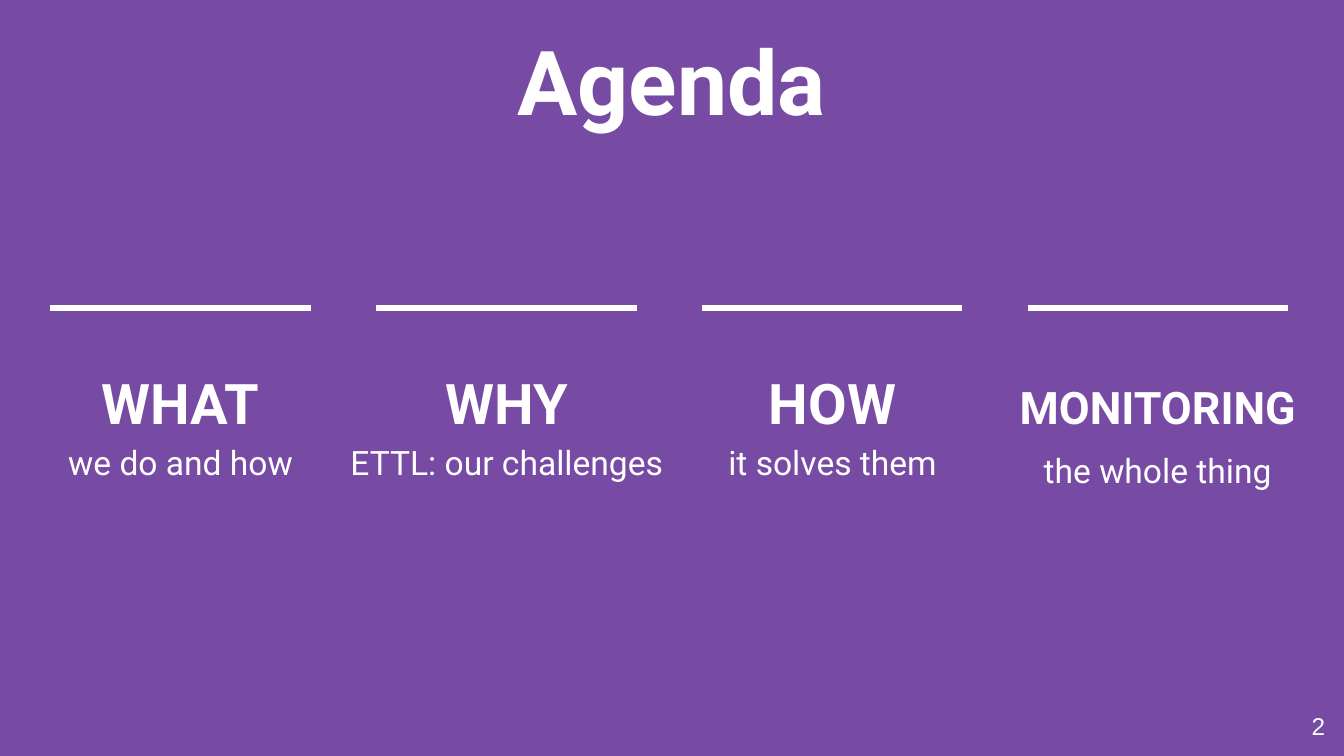
from lxml.etree import SubElement
from pptx import Presentation
from pptx.dml.color import RGBColor
from pptx.enum.shapes import MSO_CONNECTOR
from pptx.enum.text import MSO_ANCHOR, PP_ALIGN
from pptx.oxml.ns import qn
from pptx.util import Cm, Pt


def color(value):
    return RGBColor.from_string(value)


class AgendaSlide:
    PURPLE = "774AA4"
    WHITE = "FFFFFF"
    INSET = 0.25

    def __init__(self, deck):
        self.slide = deck.slides.add_slide(deck.slide_layouts[5])
        background = self.slide.background.fill
        background.solid()
        background.fore_color.rgb = color(self.PURPLE)

    def apply(self, target, values):
        for name, value in values.items():
            setattr(target, name, value)

    def fill_text(self, box, runs, anchor, align, spacing=1.0, font="Roboto"):
        frame = box.text_frame
        margins = ("margin_left", "margin_top", "margin_right", "margin_bottom")
        self.apply(frame, dict.fromkeys(margins, Cm(self.INSET)))
        self.apply(frame, {"word_wrap": True, "vertical_anchor": anchor})
        paragraph = frame.paragraphs[0]
        self.apply(paragraph, {"alignment": align, "line_spacing": spacing})
        for index, (text, size, bold) in enumerate(runs):
            if index:
                paragraph.add_line_break()
            run = paragraph.add_run()
            run.text = text
            self.apply(run.font, {"name": font, "size": Pt(size), "bold": bold})
            run.font.color.rgb = color(self.WHITE)

    def title(self, text, left, top, width, height):
        heading = self.slide.shapes.title
        place = {"left": left, "top": top, "width": width, "height": height}
        self.apply(heading, {name: Cm(value) for name, value in place.items()})
        self.fill_text(heading, [(text, 48, True)], MSO_ANCHOR.MIDDLE, PP_ALIGN.CENTER, 0.9)

    def text(self, runs, left, top, width, height, **style):
        box = self.slide.shapes.add_textbox(Cm(left), Cm(top), Cm(width), Cm(height))
        self.fill_text(box, runs, **style)

    def rule(self, left, top, length):
        rule = self.slide.shapes.add_connector(
            MSO_CONNECTOR.STRAIGHT, Cm(left), Cm(top), Cm(left + length), Cm(top))
        rule.line.color.rgb = color(self.WHITE)
        rule.line.width = Pt(3)
        SubElement(rule._element.spPr, qn("a:effectLst"))


def main():
    deck = Presentation()
    deck.slide_width, deck.slide_height = Cm(25.4), Cm(14.29)
    agenda = AgendaSlide(deck)
    agenda.title("Agenda", 9, 0.43, 7.39, 2.41)

    for column in range(4):
        agenda.rule(0.94 + column * 6.16, 5.82, 4.93)

    topics = [
        ("WHAT", "we do and how", 30, 1.15, 0.33, 6.17, 3.07),
        ("WHY", "ETTL: our challenges", 30, 1.15, 6.1, 6.96, 2.84),
        ("HOW", "it solves them", 30, 1.15, 12.7, 6.07, 4.01),
        ("MONITORING", "the whole thing", 24, 1.4, 18.69, 6.38, 2.74),
    ]
    for keyword, detail, size, spacing, left, width, height in topics:
        agenda.text([(keyword, size, True), (detail, 18, False)],
                    left, 6.53, width, height,
                    anchor=MSO_ANCHOR.TOP, align=PP_ALIGN.CENTER, spacing=spacing)

    agenda.text([("2", 13, False)], 23.77, 13.18, 1.52, 1.09,
                anchor=MSO_ANCHOR.MIDDLE, align=PP_ALIGN.RIGHT, font="Arial")
    deck.save("out.pptx")


if __name__ == "__main__":
    main()
